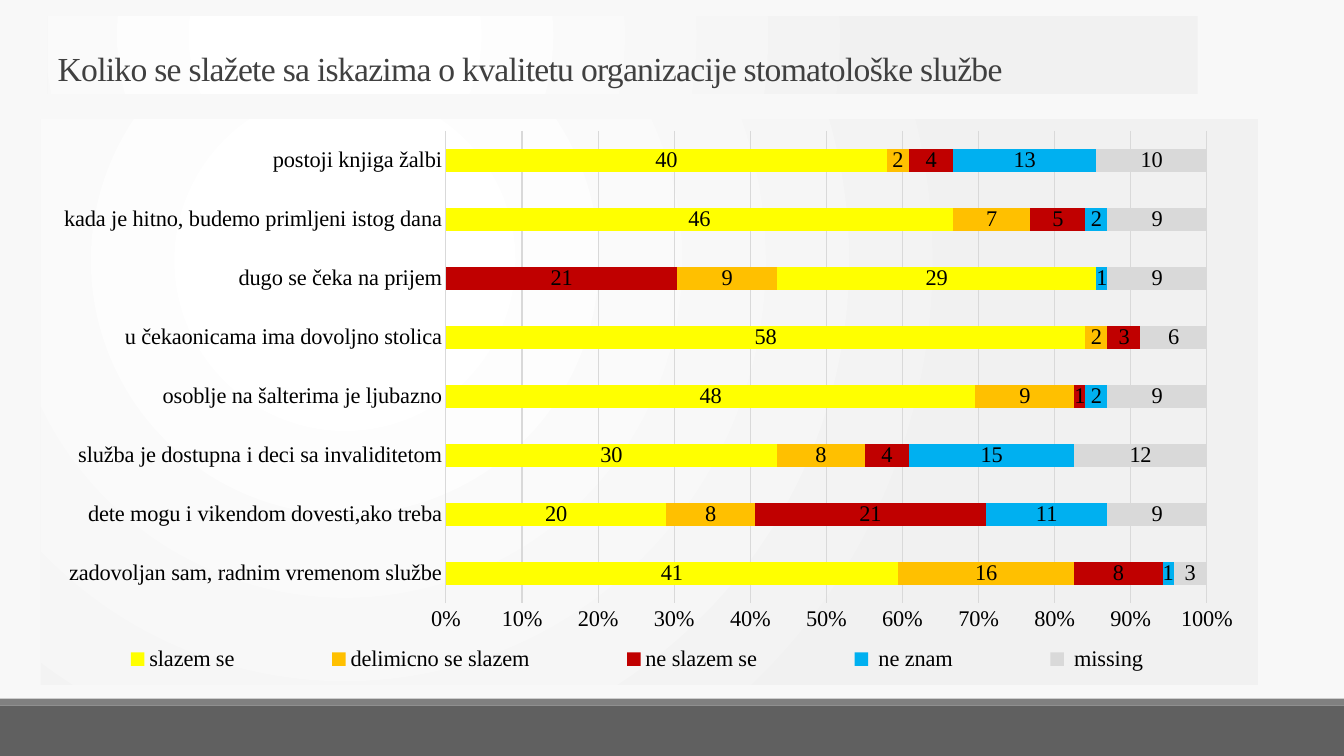
import pptx
import pptx.chart.data
import pptx.dml.color
import pptx.enum.chart
import pptx.enum.shapes
import pptx.enum.text
import pptx.oxml
import pptx.oxml.ns
import pptx.util

Pt = pptx.util.Pt
RGBColor = pptx.dml.color.RGBColor

BACKGROUND = RGBColor(0xF8, 0xF8, 0xF8)
WHITE = RGBColor(0xFF, 0xFF, 0xFF)
PANEL_EDGE = RGBColor(0xF1, 0xF1, 0xF1)
FOOTER_DARK = RGBColor(0x60, 0x60, 0x60)
FOOTER_LIGHT = RGBColor(0x80, 0x80, 0x80)
TITLE_GRAY = RGBColor(0x40, 0x40, 0x40)
BLACK = RGBColor(0, 0, 0)
YELLOW = RGBColor(0xFF, 0xFF, 0x00)
ORANGE = RGBColor(0xFF, 0xC0, 0x00)
RED = RGBColor(0xC0, 0x00, 0x00)
BLUE = RGBColor(0x00, 0xB0, 0xF0)
LIGHT_GRAY = RGBColor(0xD9, 0xD9, 0xD9)

FONT = "Times New Roman"
WIDTH, HEIGHT = 960, 540

STATEMENTS = [
    "zadovoljan sam, radnim vremenom službe",
    "dete mogu i vikendom dovesti,ako treba",
    "služba je dostupna i deci sa invaliditetom",
    "osoblje na šalterima je ljubazno",
    "u čekaonicama ima dovoljno stolica",
    "dugo se čeka na prijem",
    "kada je hitno, budemo primljeni istog dana",
    "postoji knjiga žalbi",
]
ANSWERS = [
    ("slazem se", YELLOW, (41, 20, 30, 48, 58, 21, 46, 40)),
    ("delimicno se slazem", ORANGE, (16, 8, 8, 9, 2, 9, 7, 2)),
    ("ne slazem se", RED, (8, 21, 4, 1, 3, 29, 5, 4)),
    (" ne znam", BLUE, (1, 11, 15, 2, None, 1, 2, 13)),
    (" missing", LIGHT_GRAY, (3, 9, 12, 9, 6, 9, 9, 10)),
]
# The one negative statement swaps the colours of agreeing and disagreeing.
NEGATIVE_STATEMENT = STATEMENTS.index("dugo se čeka na prijem")
SWAPPED = {YELLOW: RED, RED: YELLOW}


def radial_fill():
    """Return a circular gradient that is centred a quarter in from the top left."""
    return pptx.oxml.parse_xml(
        f'<a:gradFill {pptx.oxml.ns.nsdecls("a")} rotWithShape="1"><a:gsLst>'
        f'<a:gs pos="13000"><a:srgbClr val="{WHITE}"/></a:gs>'
        f'<a:gs pos="100000"><a:srgbClr val="{PANEL_EDGE}"/></a:gs></a:gsLst>'
        '<a:path path="circle">'
        '<a:fillToRect l="50000" t="50000" r="100000" b="100000"/></a:path>'
        '</a:gradFill>')


def chart_layout(x, y, width, height, inner=False):
    """Return a manual layout in fractions of the chart area."""
    target = '<c:layoutTarget val="inner"/>' if inner else ''
    return pptx.oxml.parse_xml(
        f'<c:layout {pptx.oxml.ns.nsdecls("c")}><c:manualLayout>{target}'
        '<c:xMode val="edge"/><c:yMode val="edge"/>'
        f'<c:x val="{x}"/><c:y val="{y}"/><c:w val="{width}"/><c:h val="{height}"/>'
        '</c:manualLayout></c:layout>')


def format_font(font, size=16, color=BLACK):
    font.name = FONT
    font.size = Pt(size)
    font.bold = False
    font.color.rgb = color


def write_text(frame, text, size=16, color=BLACK, line_spacing=1.0, tracking=0,
               align=pptx.enum.text.PP_ALIGN.LEFT,
               anchor=pptx.enum.text.MSO_ANCHOR.BOTTOM):
    frame.word_wrap = True
    frame.auto_size = pptx.enum.text.MSO_AUTO_SIZE.NONE
    frame.vertical_anchor = anchor
    paragraph = frame.paragraphs[0]
    paragraph.alignment = align
    paragraph.line_spacing = line_spacing
    run = paragraph.add_run()
    run.text = text
    format_font(run.font, size, color)
    run.font._element.set("spc", str(round(tracking * 100)))


def place_title(slide, left, top, width, height):
    title = slide.shapes.title
    title.left, title.top = Pt(left), Pt(top)
    title.width, title.height = Pt(width), Pt(height)
    title._element.spPr.append(radial_fill())
    write_text(title.text_frame,
               "Koliko se slažete sa iskazima o kvalitetu organizacije stomatološke službe",
               size=24, color=TITLE_GRAY, line_spacing=0.85, tracking=-0.5)


def add_footer(slide, left, top, width, height, stripe=5):
    bands = ((top, stripe, FOOTER_LIGHT),
             (top + stripe, height - stripe, FOOTER_DARK))
    for band_top, band_height, color in bands:
        band = slide.shapes.add_shape(
            pptx.enum.shapes.MSO_SHAPE.RECTANGLE,
            Pt(left), Pt(band_top), Pt(width), Pt(band_height))
        band.shadow.inherit = False
        band.fill.solid()
        band.fill.fore_color.rgb = color
        band.line.fill.background()


def format_axes(chart):
    for axis in (chart.category_axis, chart.value_axis):
        axis.major_tick_mark = axis.minor_tick_mark = pptx.enum.chart.XL_TICK_MARK.NONE
        format_font(axis.tick_labels.font)
    statement_line = chart.category_axis.format.line
    statement_line.color.rgb = LIGHT_GRAY
    statement_line.width = Pt(0.75)

    share_axis = chart.value_axis
    share_axis.minimum_scale, share_axis.maximum_scale = 0, 1
    share_axis.major_unit = 0.1
    share_axis.tick_labels.number_format = "0%"
    share_axis.tick_labels.number_format_is_linked = False
    share_axis.format.line.fill.background()
    share_axis.major_gridlines.format.line.color.rgb = LIGHT_GRAY
    share_axis.major_gridlines.format.line.width = Pt(0.75)


def format_answers(plot):
    plot.gap_width = 150
    plot.overlap = 100
    plot.vary_by_categories = False
    for series, (_, color, _) in zip(plot.series, ANSWERS):
        series.format.fill.solid()
        series.format.fill.fore_color.rgb = color
        series.invert_if_negative = False
        if color in SWAPPED:
            swapped_fill = series.points[NEGATIVE_STATEMENT].format.fill
            swapped_fill.solid()
            swapped_fill.fore_color.rgb = SWAPPED[color]
        series.data_labels.show_value = True
        format_font(series.data_labels.font)


def add_answer_chart(slide, left, top, width, height):
    answer_data = pptx.chart.data.CategoryChartData()
    answer_data.categories = STATEMENTS
    for name, _, values in ANSWERS:
        answer_data.add_series(name, values)
    chart = slide.shapes.add_chart(
        pptx.enum.chart.XL_CHART_TYPE.BAR_STACKED_100,
        Pt(left), Pt(top), Pt(width), Pt(height), answer_data).chart
    chart.has_title = False
    format_font(chart.font)
    format_axes(chart)
    format_answers(chart.plots[0])

    chart.has_legend = True
    legend = chart.legend
    legend.position = pptx.enum.chart.XL_LEGEND_POSITION.BOTTOM
    legend.include_in_layout = False
    format_font(legend.font)
    legend._element.find(pptx.oxml.ns.qn("c:legendPos")).addnext(
        chart_layout(0, 0.92, 0.98, 0.07))

    chart_space = chart._chartSpace
    plot_area = chart_space.chart.plotArea
    for automatic in plot_area.findall(pptx.oxml.ns.qn("c:layout")):
        plot_area.remove(automatic)
    plot_area.insert(0, chart_layout(0.333, 0.021, 0.625, 0.835, inner=True))
    area_format = pptx.oxml.parse_xml(
        f'<c:spPr {pptx.oxml.ns.nsdecls("c", "a")}><a:ln><a:noFill/></a:ln></c:spPr>')
    area_format.insert(0, radial_fill())
    chart_space.chart.addnext(area_format)


def build_survey_slide(presentation):
    slide = presentation.slides.add_slide(presentation.slide_layouts[5])
    slide.background.fill.solid()
    slide.background.fill.fore_color.rgb = BACKGROUND
    add_footer(slide, 0, 499, WIDTH, HEIGHT - 499)
    place_title(slide, 34, 11.5, 821.5, 55.5)
    add_answer_chart(slide, 29, 85, 869.5, 404)


def main():
    presentation = pptx.Presentation()
    presentation.slide_width, presentation.slide_height = Pt(WIDTH), Pt(HEIGHT)
    build_survey_slide(presentation)
    presentation.save("out.pptx")


if __name__ == "__main__":
    main()
